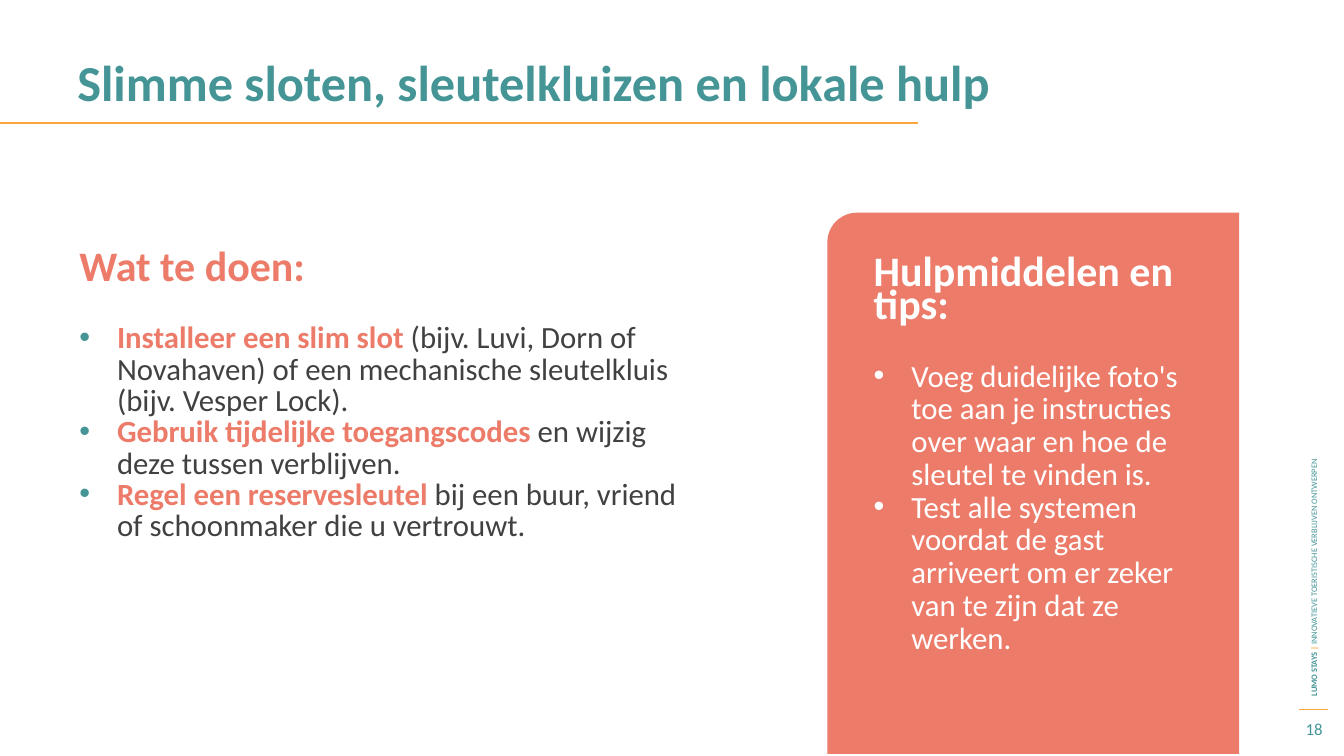
from lxml import etree
from pptx import Presentation
from pptx import util as u
from pptx.dml.color import RGBColor
from pptx.enum import shapes, text
from pptx.oxml.ns import qn

THEME = {
    "font": "Calibri",
    "teal": "459597", "coral": "EC7C69", "amber": "FBA63B",
    "grey": "414141", "white": "FFFFFF",
    "title": 36, "heading": 30, "body": 22, "number": 12, "side": 6,
}

TITLE = "Slimme sloten, sleutelkluizen en lokale hulp"
ACTIONS_HEADING = "Wat te doen:"
ACTIONS = [
    ("Installeer een slim slot ",
     "(bijv. Luvi, Dorn of Novahaven) of een mechanische sleutelkluis (bijv. Vesper Lock)."),
    ("Gebruik tijdelijke toegangscodes ", "en wijzig deze tussen verblijven."),
    ("Regel een reservesleutel ", "bij een buur, vriend of schoonmaker die u vertrouwt."),
]
TIPS_HEADING = "Hulpmiddelen en tips:"
TIPS = [
    "Voeg duidelijke foto's toe aan je instructies over waar en hoe de sleutel te vinden is.",
    "Test alle systemen voordat de gast arriveert om er zeker van te zijn dat ze werken.",
]
SIDE_LABEL = [
    ("LUMO STAYS ", "teal", True),
    ("| ", "amber", True),
    ("INNOVATIEVE TOERISTISCHE VERBLIJVEN ONTWERPEN", "teal", False),
]
PAGE_NUMBER = "18"

BOXES = {
    "title": (1.7, 1.37, 30.48, 2.24),
    "actions_heading": (1.75, 6.17, 15.6, 2.24),
    "actions": (1.75, 8.03, 15.6, 10.16),
    "panel": (20.85, 5.36, 10.38, 13.64),
    "tips": (21.77, 6.48, 8.76, 9.12),
    "side": (25.78, 10.21, 14.66, 0.51),
    "number": (32.46, 17.93, 1.32, 0.86),
}
RULES = [(0, 23.14, 3.1, 1.5), (32.74, 33.48, 17.88, 0.75)]
BULLET_INDENT = 0.95
CORNER_RADIUS = 0.75


def color(name):
    return RGBColor.from_string(THEME[name])


def place(box):
    return [u.Cm(value) for value in BOXES[box]]


def set_values(target, values):
    for name, value in values.items():
        setattr(target, name, value)


def add_bullet(paragraph, bullet_color):
    properties = paragraph._p.get_or_add_pPr()
    properties.set("marL", str(u.Cm(BULLET_INDENT)))
    properties.set("indent", str(-u.Cm(BULLET_INDENT)))
    holder = etree.SubElement(properties, qn("a:buClr"))
    etree.SubElement(holder, qn("a:srgbClr"), val=THEME[bullet_color])
    etree.SubElement(properties, qn("a:buFont"), typeface="Arial")
    etree.SubElement(properties, qn("a:buChar"), char="•")


def line(runs, size, spacing=None, bullet=None, **formats):
    return {"runs": runs, "size": size, "spacing": spacing, "bullet": bullet, "formats": formats}


def add_text(slide, box, lines, anchor=text.MSO_ANCHOR.TOP, rotation=0):
    shape = slide.shapes.add_textbox(*place(box))
    shape.rotation = rotation
    frame = shape.text_frame
    set_values(frame, {"word_wrap": True, "vertical_anchor": anchor})
    for index, item in enumerate(lines):
        paragraph = frame.add_paragraph() if index else frame.paragraphs[0]
        if item["bullet"]:
            add_bullet(paragraph, item["bullet"])
        if item["spacing"]:
            paragraph.line_spacing = u.Pt(item["spacing"])
        set_values(paragraph, item["formats"])
        for words, run_color, bold in item["runs"]:
            run = paragraph.add_run()
            run.text = words
            set_values(run.font, {"name": THEME["font"], "size": u.Pt(THEME[item["size"]]), "bold": bold})
            run.font.color.rgb = color(run_color)


def add_rule(slide, left, right, top, width):
    rule = slide.shapes.add_connector(
        shapes.MSO_CONNECTOR.STRAIGHT, u.Cm(left), u.Cm(top), u.Cm(right), u.Cm(top))
    rule.line.color.rgb = color("amber")
    rule.line.width = u.Pt(width)
    etree.SubElement(rule._element.spPr, qn("a:effectLst"))


def add_panel(slide):
    panel = slide.shapes.add_shape(shapes.MSO_SHAPE.SNIP_ROUND_RECTANGLE, *place("panel"))
    panel.adjustments[0] = CORNER_RADIUS / BOXES["panel"][2]
    panel.adjustments[1] = 0
    panel.shadow.inherit = False
    panel.fill.solid()
    panel.fill.fore_color.rgb = color("coral")
    panel.line.fill.background()


def main():
    presentation = Presentation()
    set_values(presentation, {"slide_width": u.Cm(33.87), "slide_height": u.Cm(19.05)})
    slide = presentation.slides.add_slide(presentation.slide_layouts[6])

    for rule in RULES:
        add_rule(slide, *rule)
    add_panel(slide)

    middle = text.MSO_ANCHOR.MIDDLE
    add_text(slide, "side", [line(SIDE_LABEL, "side")], middle, 270)
    add_text(slide, "title", [line([(TITLE, "teal", True)], "title", 37.2)])
    add_text(slide, "number", [line([(PAGE_NUMBER, "teal", False)], "number",
                                    alignment=text.PP_ALIGN.CENTER)], middle)
    add_text(slide, "actions_heading", [line([(ACTIONS_HEADING, "coral", True)], "heading", 29)])
    add_text(slide, "actions", [
        line([(lead, "coral", True), (rest, "grey", False)], "body", 22.4, "teal")
        for lead, rest in ACTIONS])

    tips = [line([(tip, "white", False)], "body", 23.4, "white") for tip in TIPS]
    tips[0]["formats"]["space_before"] = u.Pt(23.4)
    add_text(slide, "tips", [line([(TIPS_HEADING, "white", True)], "heading", 23.4)] + tips)

    presentation.save("out.pptx")


if __name__ == "__main__":
    main()
